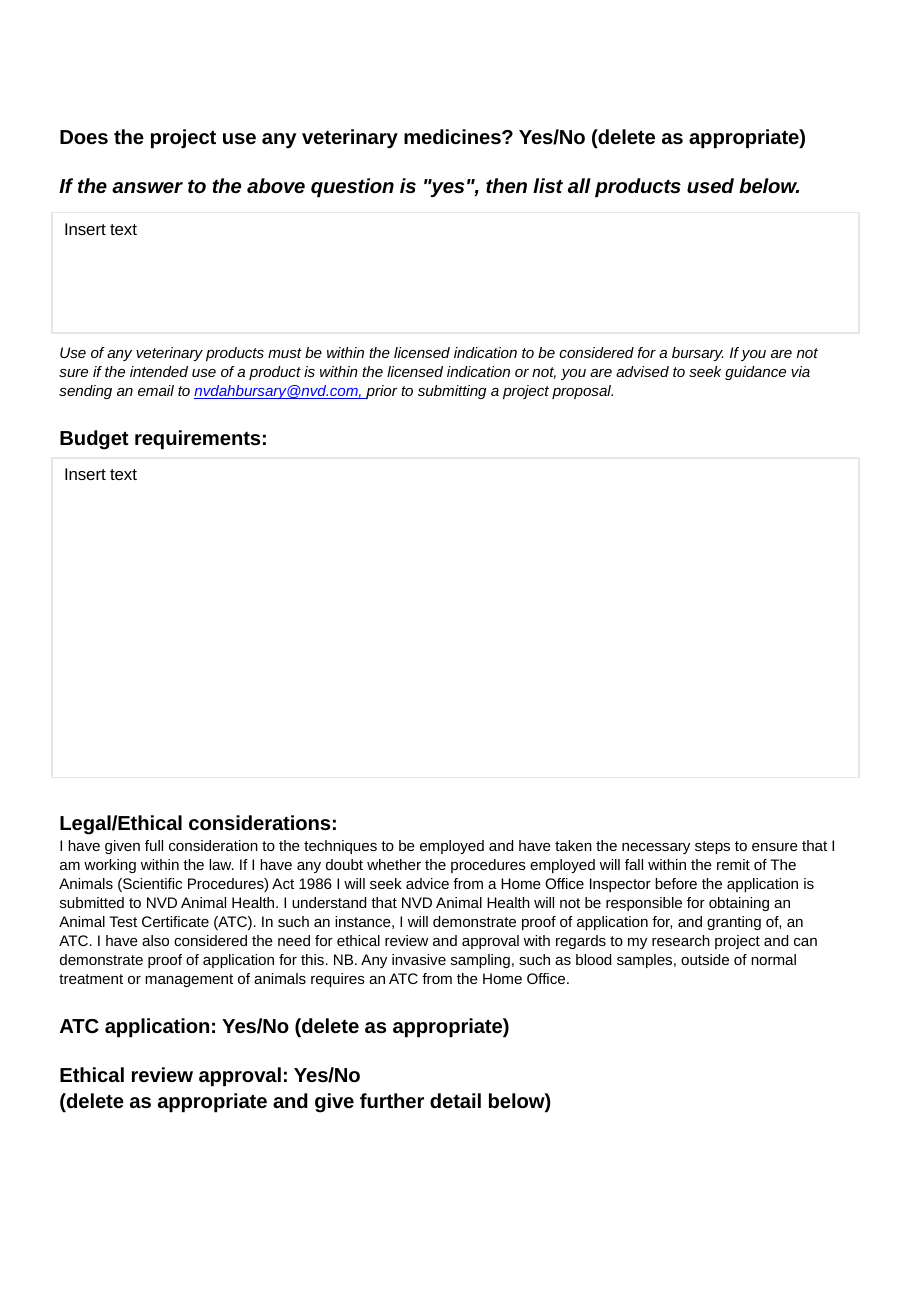
from pptx import Presentation
from pptx.dml.color import RGBColor
from pptx.enum.shapes import MSO_SHAPE
from pptx.enum.text import MSO_ANCHOR, PP_ALIGN
from pptx.util import Pt

RECT = MSO_SHAPE.RECTANGLE
TOP, LEFT = MSO_ANCHOR.TOP, PP_ALIGN.LEFT
PX = 9144  # 100 px to the inch


def rgb(color):
    return RGBColor.from_string(color)


def write(sp, paragraphs, insets):
    tf = sp.text_frame
    tf.word_wrap = True
    tf.vertical_anchor = TOP
    for side, inset in zip(("left", "top", "right", "bottom"), insets):
        setattr(tf, f"margin_{side}", inset * PX)
    for i, (style, before, runs) in enumerate(paragraphs):
        p = tf.paragraphs[0] if i == 0 else tf.add_paragraph()
        p.alignment = LEFT
        p.space_before = Pt(before)
        p.line_spacing = style["spacing"]
        for text, extra in runs:
            r = p.add_run()
            r.text = text
            r.font.name = "Arial"
            r.font.color.rgb = rgb("0000FF" if extra else "000000")
            for name, value in {**style["font"], **extra}.items():
                setattr(r.font, name, value)
            r.font._element.set("spc", style["tracking"])


# Text styles
HEADING = {"font": {"size": Pt(12), "bold": True}, "spacing": 1.0, "tracking": "-6"}
PROMPT = {**HEADING, "font": {**HEADING["font"], "italic": True}}
BODY = {"font": {"size": Pt(9)}, "spacing": 1.04, "tracking": "-3"}
NOTE = {**BODY, "font": {"size": Pt(9), "italic": True}}
ENTRY = {"font": {"size": Pt(10)}, "spacing": 1.0, "tracking": "-5"}
GAP = 15  # points between sections

prs = Presentation()
prs.slide_width, prs.slide_height = 750 * PX, 1083 * PX
s = prs.slides.add_slide(prs.slide_layouts[6])

# Questions, guidance and declarations
sections = [
    ((48, 100, 633, 63), [
        (HEADING, 0, [("Does the project use any veterinary medicines? Yes/No "
                       "(delete as appropriate)", {})]),
        (PROMPT, GAP, [('If the answer to the above question is "yes", then list '
                        "all products used below.", {})]),
    ]),
    ((48, 280, 631, 88), [
        (NOTE, 0, [
            ("Use of any veterinary products must be within the licensed indication "
             "to be considered for a bursary. If you are not sure if the intended use "
             "of a product is within the licensed indication or not, you are advised "
             "to seek guidance via sending an email to ", {}),
            ("nvdahbursary@nvd.com, ", {"underline": True}),
            ("prior to submitting a project proposal.", {}),
        ]),
        (HEADING, GAP, [("Budget requirements:", {})]),
    ]),
    ((48, 665, 646, 243), [
        (HEADING, 0, [("Legal/Ethical considerations:", {})]),
        (BODY, 0.5, [
            ("I have given full consideration to the techniques to be employed and have "
             "taken the necessary steps to ensure that I am working within the law. If I "
             "have any doubt whether the procedures employed will fall within the remit "
             "of The Animals (Scientific Procedures) Act 1986 I will seek advice from a "
             "Home Office Inspector before the application is submitted to NVD Animal "
             "Health. ", {}),
            ("I understand that NVD Animal Health will not be responsible for "
             "obtaining an Animal Test Certificate (ATC). In such an instance, I will "
             "demonstrate proof of application for, and granting of, an ATC. ", {}),
            ("I have also considered the need for ethical review and approval with "
             "regards to my research project and can demonstrate proof of application "
             "for this. NB. Any invasive sampling, such as blood samples, outside of "
             "normal treatment or management of animals requires an ATC from the Home "
             "Office.", {}),
        ]),
        (HEADING, GAP, [("ATC application: Yes/No (delete as appropriate)", {})]),
        (HEADING, GAP, [("Ethical review approval: Yes/No", {})]),
        (HEADING, 1, [("(delete as appropriate and give further detail below)", {})]),
    ]),
]
for box, paragraphs in sections:
    sp = s.shapes.add_textbox(*(v * PX for v in box))
    write(sp, paragraphs, (1, 2, 4, 0))

# Answer boxes
for top, height in ((175, 99), (377, 263)):
    sp = s.shapes.add_shape(RECT, 43 * PX, top * PX, 664 * PX, height * PX)
    sp.shadow.inherit = False
    sp.fill.background()
    sp.line.color.rgb = rgb("E7E6E6")
    sp.line.width = Pt(1)
    write(sp, [(ENTRY, 0, [("Insert text", {})])], (10, 5, 0, 0))

prs.save("out.pptx")
